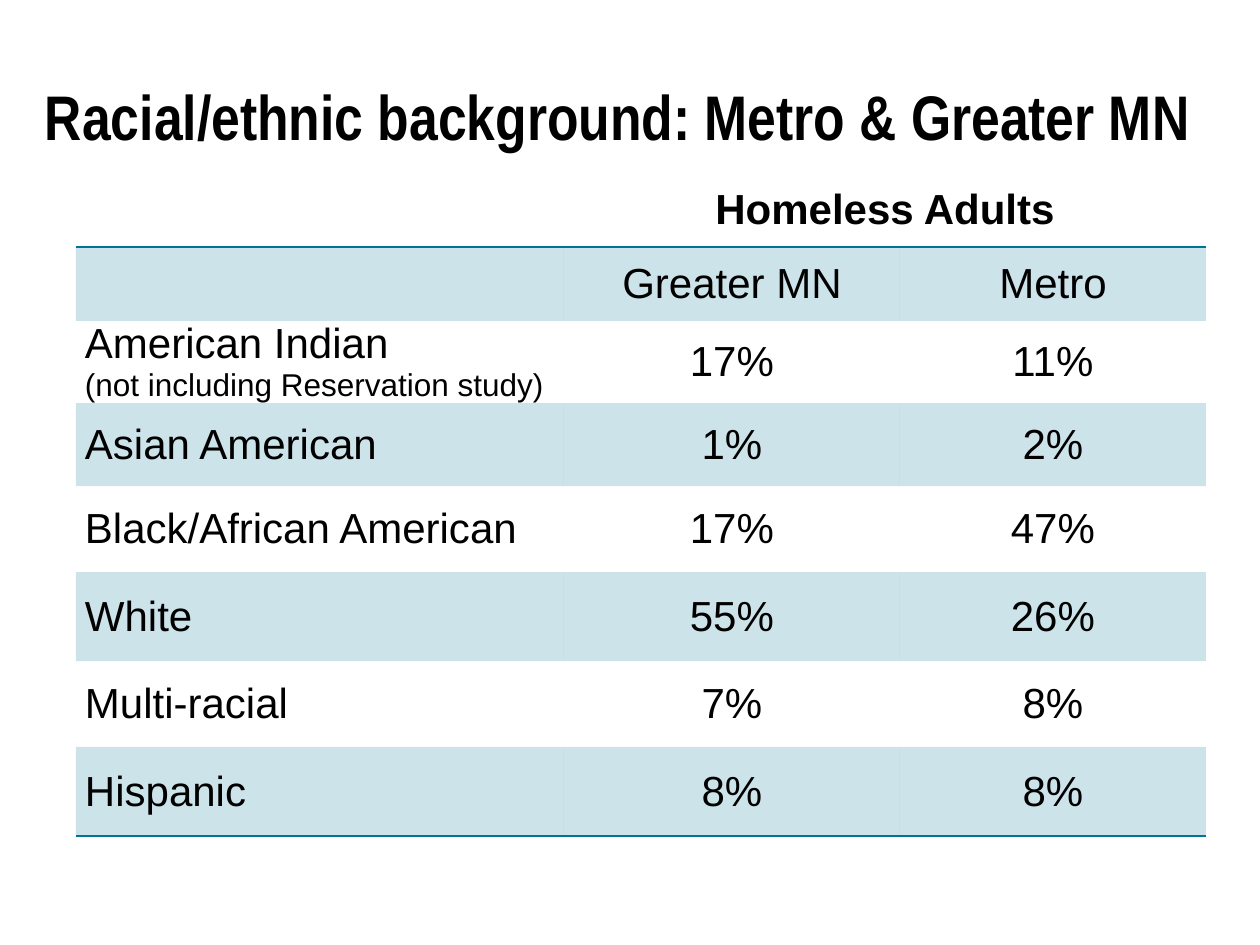
import dataclasses

import lxml.etree
import pptx
import pptx.dml.color
import pptx.enum.text
import pptx.oxml.ns
import pptx.util

EMU_PER_PX = 914400 / 126
NO_GRID_STYLE = "{2D5ABB26-0587-4C30-8999-92F81FD0307C}"
TITLE = "Racial/ethnic background: Metro & Greater MN"
GROUP_HEADING = "Homeless Adults"
HEADINGS = ("", "Greater MN", "Metro")
BACKGROUNDS = (
    ("American Indian\v(not including Reservation study)", "17%", "11%"),
    ("Asian American", "1%", "2%"),
    ("Black/African American", "17%", "47%"),
    ("White", "55%", "26%"),
    ("Multi-racial", "7%", "8%"),
    ("Hispanic", "8%", "8%"),
)
COLUMN_WIDTHS = (488, 336, 306)
ROW_HEIGHTS = (74, 74, 74, 83, 86, 89, 86, 89)


@dataclasses.dataclass(frozen=True)
class Theme:
    title_font: str = "Arial Narrow"
    body_font: str = "Arial"
    title_size: int = 36
    body_size: int = 24
    note_size: int = 18
    text: str = "000000"
    accent: str = "007398"
    band_alpha: int = 20
    rule_width: int = 1


THEME = Theme()


def px(length):
    return pptx.util.Emu(round(length * EMU_PER_PX))


def format_run(run, font_name, size, bold=False):
    run.font.name = font_name
    run.font.size = pptx.util.Pt(size)
    run.font.bold = bold
    run.font.color.rgb = pptx.dml.color.RGBColor.from_string(THEME.text)


def add_title(slide, left, top, width, height):
    title = slide.shapes.title
    title.left, title.top, title.width, title.height = map(px, (left, top, width, height))
    frame = title.text_frame
    frame.text = TITLE
    frame.margin_left = frame.margin_right = frame.margin_top = frame.margin_bottom = 0
    frame.vertical_anchor = pptx.enum.text.MSO_ANCHOR.BOTTOM
    frame.auto_size = pptx.enum.text.MSO_AUTO_SIZE.NONE
    frame.word_wrap = True
    paragraph = frame.paragraphs[0]
    paragraph.alignment = pptx.enum.text.PP_ALIGN.LEFT
    format_run(paragraph.runs[0], THEME.title_font, THEME.title_size, bold=True)


def fill_band(cell):
    cell.fill.solid()
    cell.fill.fore_color.rgb = pptx.dml.color.RGBColor.from_string(THEME.accent)
    color = cell._tc.tcPr.find(".//" + pptx.oxml.ns.qn("a:srgbClr"))
    alpha = lxml.etree.SubElement(color, pptx.oxml.ns.qn("a:alpha"))
    alpha.set("val", str(THEME.band_alpha * 1000))


def add_bottom_rule(cell):
    # Borders come before the fill in the cell properties
    rule = pptx.oxml.parse_xml(
        f'<a:lnB {pptx.oxml.ns.nsdecls("a")} w="{pptx.util.Pt(THEME.rule_width)}">'
        f'<a:solidFill><a:srgbClr val="{THEME.accent}"/></a:solidFill></a:lnB>'
    )
    cell._tc.get_or_add_tcPr().insert(0, rule)


def write_cell(cell, text, centered, bold, margins):
    cell.vertical_anchor = pptx.enum.text.MSO_ANCHOR.MIDDLE
    cell.margin_left = cell.margin_right = px(margins[0])
    cell.margin_top = cell.margin_bottom = px(margins[1])
    paragraph = cell.text_frame.paragraphs[0]
    paragraph.text = text
    if centered:
        paragraph.alignment = pptx.enum.text.PP_ALIGN.CENTER
    if text in ("White", "Multi-racial"):
        paragraph.space_before = pptx.util.Pt(3)
    # A second line in a cell is a smaller note
    for index, run in enumerate(paragraph.runs):
        size = THEME.note_size if index else THEME.body_size
        format_run(run, THEME.body_font, size, bold)


def add_background_table(slide, left, top):
    rows = (("", GROUP_HEADING, ""), HEADINGS) + BACKGROUNDS
    table = slide.shapes.add_table(
        len(rows), len(COLUMN_WIDTHS), px(left), px(top),
        px(sum(COLUMN_WIDTHS)), px(sum(ROW_HEIGHTS)),
    ).table
    table.first_row = table.horz_banding = False
    table._tbl.tblPr.find(pptx.oxml.ns.qn("a:tableStyleId")).text = NO_GRID_STYLE
    for column, width in zip(table.columns, COLUMN_WIDTHS):
        column.width = px(width)
    for row, height in zip(table.rows, ROW_HEIGHTS):
        row.height = px(height)
    table.cell(0, 1).merge(table.cell(0, 2))

    last_row = len(rows) - 1
    for row_index, values in enumerate(rows):
        is_heading = row_index < 2
        margins = (13, 6) if is_heading else (9, 0)
        for column_index, value in enumerate(values):
            cell = table.cell(row_index, column_index)
            write_cell(cell, value, column_index > 0, row_index == 0, margins)
            # Every second row is tinted
            if row_index % 2:
                fill_band(cell)
            else:
                cell.fill.background()
            if row_index in (0, last_row):
                add_bottom_rule(cell)


def main():
    presentation = pptx.Presentation()
    presentation.slide_width = px(1260)
    presentation.slide_height = px(945)
    slide = presentation.slides.add_slide(presentation.slide_layouts[5])
    add_title(slide, 45, 37, 1182, 116)
    add_background_table(slide, 76, 173)
    presentation.save("out.pptx")


if __name__ == "__main__":
    main()
